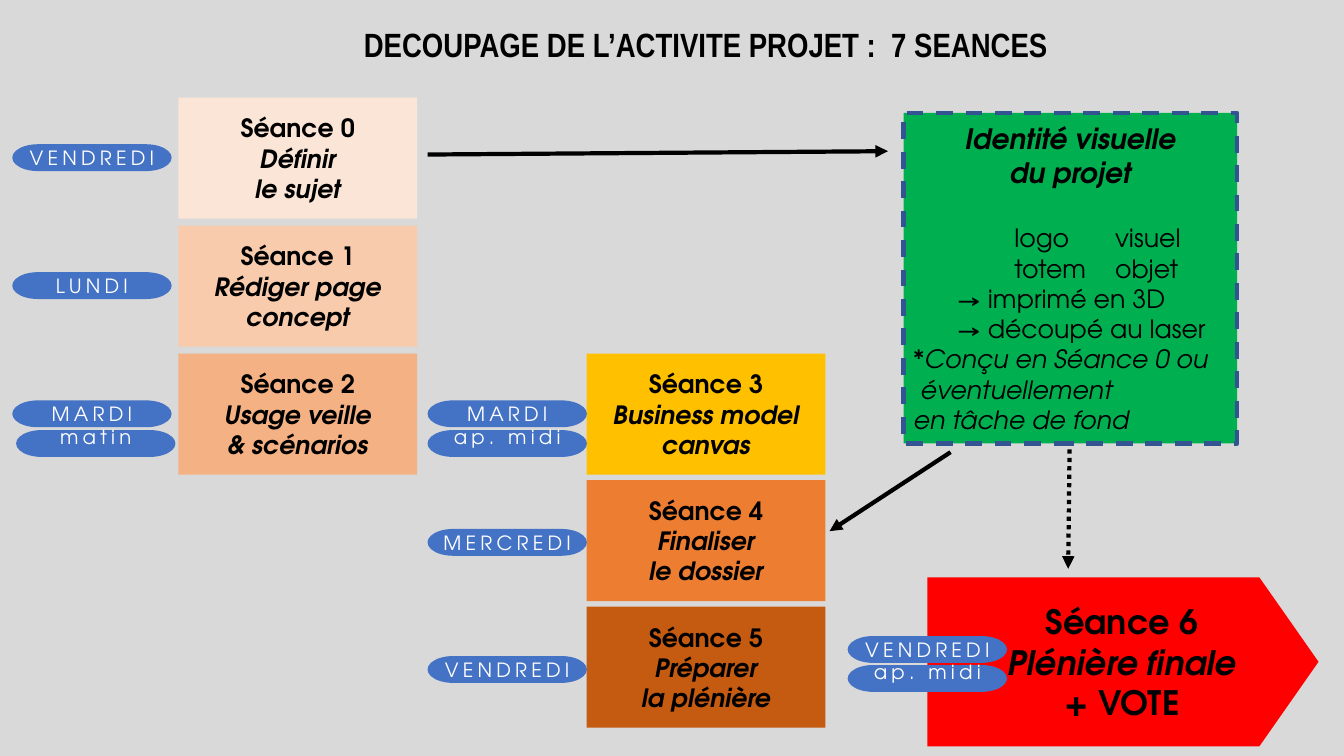
from lxml import etree
from pptx import Presentation
from pptx.dml.color import RGBColor
from pptx.enum.dml import MSO_LINE
from pptx.enum.shapes import MSO_CONNECTOR, MSO_SHAPE
from pptx.enum.text import MSO_ANCHOR, MSO_AUTO_SIZE, PP_ALIGN
from pptx.oxml.ns import qn
from pptx.util import Pt

LEFT, CENTER = PP_ALIGN.LEFT, PP_ALIGN.CENTER
MIDDLE, BOTTOM = MSO_ANCHOR.MIDDLE, MSO_ANCHOR.BOTTOM
RECTANGLE, PENTAGON = MSO_SHAPE.RECTANGLE, MSO_SHAPE.PENTAGON
PILL = MSO_SHAPE.FLOWCHART_TERMINATOR
DASH, DOTS = MSO_LINE.DASH, MSO_LINE.ROUND_DOT

COLORS = {
    "background": "D9D9D9",
    "black": "000000",
    "white": "FFFFFF",
    "pill": "4472C4",
    "identity": "00B050",
    "identity border": "325491",
    "final": "FF0000",
    "session 0": "FBE5D6",
    "session 1": "F8CBAD",
    "session 2": "F4B183",
    "session 3": "FFC000",
    "session 4": "ED7D31",
    "session 5": "C55A11",
}


def rgb(name):
    return RGBColor.from_string(COLORS[name])


def write(shape, text, size=18, font="TeX Gyre Adventor", color="black", bold=False,
          italic=False, align=CENTER, indent=0, space_before=0, spacing=0):
    """Add one paragraph, filling the first one if it is still empty."""
    frame = shape.text_frame
    paragraph = frame.paragraphs[0]
    if paragraph.runs:
        paragraph = frame.add_paragraph()
    paragraph.alignment = align
    paragraph.space_before = Pt(space_before)
    if indent:
        properties = paragraph._p.get_or_add_pPr()
        properties.set("marL", str(Pt(indent)))
        properties.set("indent", "0")
    run = paragraph.add_run()
    run.text = text
    run.font.name = font
    run.font.size = Pt(size)
    run.font.bold = bold
    run.font.italic = italic
    run.font.color.rgb = rgb(color)
    if spacing:
        run._r.get_or_add_rPr().set("spc", str(spacing * 100))


def add_box(kind, left, top, width, height, fill, anchor=MIDDLE):
    shape = slide.shapes.add_shape(kind, Pt(left), Pt(top), Pt(width), Pt(height))
    shape.shadow.inherit = False
    shape.fill.solid()
    shape.fill.fore_color.rgb = rgb(fill)
    shape.line.fill.background()
    shape.text_frame.word_wrap = True
    shape.text_frame.vertical_anchor = anchor
    return shape


presentation = Presentation()
presentation.slide_width = Pt(960)
presentation.slide_height = Pt(540)
slide = presentation.slides.add_slide(presentation.slide_layouts[5])
slide.background.fill.solid()
slide.background.fill.fore_color.rgb = rgb("background")

# Title
title = slide.shapes.title
title.left, title.top, title.width, title.height = Pt(252.7), Pt(13.7), Pt(509), Pt(36)
title.text_frame.word_wrap = False
title.text_frame.auto_size = MSO_AUTO_SIZE.NONE
title.text_frame.vertical_anchor = MIDDLE
write(title, "DECOUPAGE DE L’ACTIVITE PROJET :  7 SEANCES", size=24,
      font="Arial Narrow", bold=True, align=LEFT)

# Sessions: two columns of three, the second starting level with the end of the first
columns = [
    (127.4, 69.8, 91.4, [["Définir", "le sujet"],
                         ["Rédiger page concept"],
                         ["Usage veille", "& scénarios"]]),
    (419, 252.6, 90.4, [["Business model canvas"],
                        ["Finaliser", "le dossier"],
                        ["Préparer", "la plénière"]]),
]
number = 0
for left, first_top, step, subjects in columns:
    for row, subject in enumerate(subjects):
        session = add_box(RECTANGLE, left, first_top + row * step, 170.6, 86.4,
                          f"session {number}")
        write(session, f"Séance {number}", bold=True)
        for line in subject:
            write(session, line, bold=True, italic=True)
        number += 1

# Final session
final = add_box(PENTAGON, 662.4, 412.4, 279.4, 120.7, "final")
final.adjustments[0] = 0.35
final.text_frame.margin_left = Pt(27)
write(final, "Séance 6", size=24, bold=True)
write(final, "Plénière finale", size=24, bold=True, italic=True)
write(final, "+ VOTE", size=24, bold=True)

# Days
days = [
    ("VENDREDI", 8.8, 103, MIDDLE),
    ("LUNDI", 8.8, 194.4, MIDDLE),
    ("MARDI", 8.8, 286, MIDDLE),
    ("matin", 11.5, 307.2, BOTTOM),
    ("MARDI", 305.4, 286, MIDDLE),
    ("ap. midi", 305.4, 307.2, BOTTOM),
    ("MERCREDI", 305.4, 377.8, MIDDLE),
    ("VENDREDI", 305.4, 468.6, MIDDLE),
    ("ap. midi", 605.5, 475, BOTTOM),
    ("VENDREDI", 605.5, 454.3, MIDDLE),
]
for day, left, top, anchor in days:
    pill = add_box(PILL, left, top, 113.8, 19.2, "pill", anchor)
    pill.text_frame.margin_left = pill.text_frame.margin_right = 0
    write(pill, day, size=14, color="white", spacing=3)

# Visual identity
identity = add_box(RECTANGLE, 645.4, 80.6, 238.3, 236.2, "identity")
identity.line.color.rgb = rgb("identity border")
identity.line.width = Pt(3)
identity.line.dash_style = DASH
write(identity, "Identité visuelle", size=20, bold=True, italic=True)
write(identity, "du projet", size=20, bold=True, italic=True)
write(identity, "logo\tvisuel", align=LEFT, indent=72, space_before=24)
write(identity, "totem\tobjet", align=LEFT, indent=72)
for technique in ("→ imprimé en 3D", "→ découpé au laser"):
    write(identity, technique, align=LEFT, indent=31)
write(identity, "*Conçu en Séance 0 ou", italic=True, align=LEFT)
write(identity, "éventuellement", italic=True, align=LEFT, indent=5)
write(identity, "en tâche de fond", italic=True, align=LEFT)

# Arrows
arrows = [
    (764, 321, 763, 406.3, DOTS),
    (305.4, 110.4, 634.3, 108, None),
    (679, 323, 592.6, 379.4, None),
]
for start_x, start_y, end_x, end_y, dash in arrows:
    arrow = slide.shapes.add_connector(MSO_CONNECTOR.STRAIGHT, Pt(start_x), Pt(start_y),
                                       Pt(end_x), Pt(end_y))
    arrow.line.color.rgb = rgb("black")
    arrow.line.width = Pt(3)
    if dash:
        arrow.line.dash_style = dash
    etree.SubElement(arrow.line._get_or_add_ln(), qn("a:tailEnd"), type="triangle")
    etree.SubElement(arrow._element.spPr, qn("a:effectLst"))

presentation.save("out.pptx")
